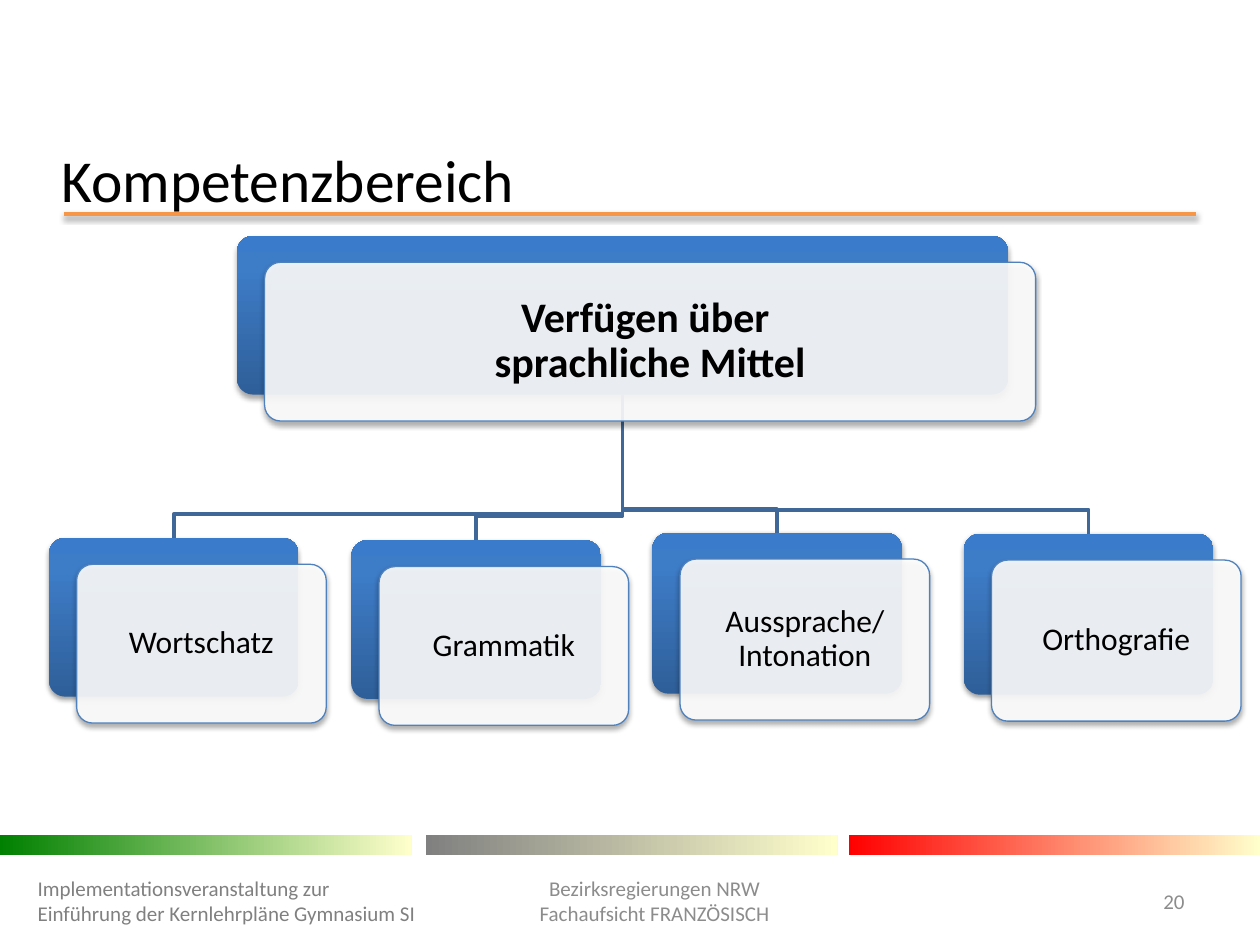
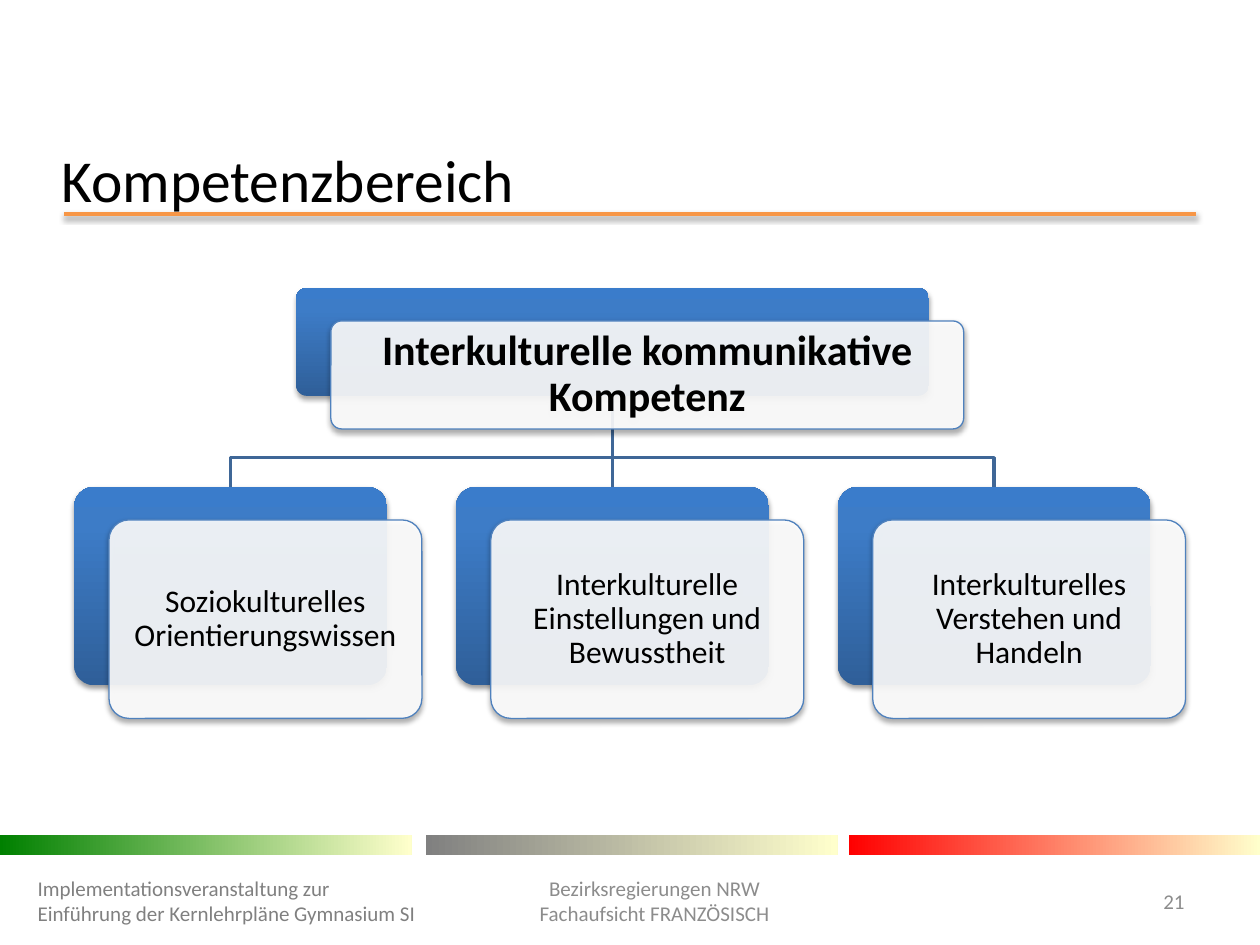
from lxml.etree import SubElement
from pptx import Presentation
from pptx.dml.color import RGBColor
from pptx.enum.shapes import MSO_CONNECTOR as Connector, MSO_SHAPE as Shape
from pptx.enum.text import MSO_ANCHOR as Anchor, PP_ALIGN as Align
from pptx.oxml.ns import qn
from pptx.util import Pt

# Content: each chart has one root and its children; boxes are left, top, width, height
TITLE = "Kompetenzbereich"
EVENT = "Implementationsveranstaltung zur\vEinführung der Kernlehrpläne Gymnasium SI"
AUTHORITY = "Bezirksregierungen NRW\nFachaufsicht FRANZÖSISCH"
CHARTS = [
    {
        "number": 20,
        "offset": (15.8, 15.1),
        "drop": 13.7,
        "root": ("Verfügen über \vsprachliche Mittel", (135.4, 134.8, 440.6, 90.7)),
        "children": [
            ("Wortschatz", (28, 307.4, 142.6, 90.7)),
            ("Grammatik", (200.8, 308.7, 142.6, 90.7)),
            ("Aussprache/ Intonation", (372.8, 304.4, 142.6, 92)),
            ("Orthografie", (550.8, 305, 142.6, 92)),
        ],
    },
    {
        "number": 21,
        "offset": (19.9, 18.9),
        "drop": 16.6,
        "root": ("Interkulturelle kommunikative Kompetenz", (169.2, 164.5, 361.6, 61.7)),
        "children": [
            (text, (42.4 + 218.2 * column, 278.2, 178.8, 113.4))
            for column, text in enumerate([
                "Soziokulturelles Orientierungswissen",
                "Interkulturelle Einstellungen und Bewusstheit",
                "Interkulturelles Verstehen und Handeln",
            ])
        ],
    },
]

# Shared style
FONT = "Calibri"
BLACK = RGBColor(0x00, 0x00, 0x00)
WHITE = RGBColor(0xFF, 0xFF, 0xFF)
ORANGE = RGBColor(0xF7, 0x96, 0x46)
GRAY = RGBColor(0x80, 0x80, 0x80)
LIGHT_GRAY = RGBColor(0x8C, 0x8C, 0x8C)
CREAM = RGBColor(0xFF, 0xFF, 0xCC)
GREEN = RGBColor(0x00, 0x80, 0x00)
RED = RGBColor(0xFF, 0x00, 0x00)
LINK_BLUE = RGBColor(0x3F, 0x67, 0x97)
EDGE_BLUE = RGBColor(0x4F, 0x81, 0xBD)
NODE_STOPS = [
    (0, RGBColor(0x2F, 0x5F, 0x99)),
    (80, RGBColor(0x3D, 0x7C, 0xC7)),
    (100, RGBColor(0x3A, 0x7C, 0xCB)),
]
BANDS = [(0, GREEN), (243.4, GRAY), (485, RED)]


def points(values):
    return [Pt(value) for value in values]


def set_gradient(shape, stops, angle):
    shape.fill.gradient()
    shape.fill.gradient_angle = angle
    stop_list = shape.fill._fill._gradFill.find(qn("a:gsLst"))
    stop_list.clear()
    for position, color in stops:
        stop = SubElement(stop_list, qn("a:gs"), pos=str(position * 1000))
        SubElement(stop, qn("a:srgbClr"), val=str(color))


def add_shadow(effects, distance, opacity):
    shadow = SubElement(effects, qn("a:outerShdw"), blurRad=str(Pt(3.1)),
                        dist=str(Pt(distance)), dir="5400000", rotWithShape="0")
    color = SubElement(shadow, qn("a:srgbClr"), val=str(BLACK))
    SubElement(color, qn("a:alpha"), val=str(opacity * 1000))


def write(frame, text, size, color, align, bold=False, spacing=None):
    frame.word_wrap = True
    frame.text = text
    for para in frame.paragraphs:
        para.alignment = align
        para.line_spacing = spacing
        font = para.font
        font.name, font.size, font.bold = FONT, Pt(size), bold
        font.color.rgb = color


def add_label(page, box, text, size, color, align=Align.LEFT, anchor=Anchor.MIDDLE):
    frame = page.shapes.add_textbox(*points(box)).text_frame
    frame.vertical_anchor = anchor
    write(frame, text, size, color, align)


def add_frame(page, number):
    # Title with its rule
    rule = page.shapes.add_connector(Connector.STRAIGHT, *points((36.6, 122.4, 683.4, 122.4)))
    rule.line.color.rgb = ORANGE
    rule.line.width = Pt(2)
    add_shadow(SubElement(rule._element.spPr, qn("a:effectLst")), 1.6, 38)
    add_label(page, (28.1, 78.5, 481.7, 48.2), TITLE, 34, BLACK, anchor=Anchor.TOP)

    # Colour bands
    for left, color in BANDS:
        band = page.shapes.add_shape(Shape.RECTANGLE, *points((left, 477.2, 235.2, 11.5)))
        band.shadow.inherit = False
        band.line.fill.background()
        set_gradient(band, [(0, color), (100, CREAM)], 0)

    # Footers
    add_label(page, (14.4, 500.4, 233.3, 28.8), EVENT, 12, GRAY)
    add_label(page, (269.3, 488.9, 209.5, 51.1), AUTHORITY, 12, LIGHT_GRAY, Align.CENTER)
    add_label(page, (637.9, 500.4, 46.1, 28.8), str(number), 12, LIGHT_GRAY, Align.RIGHT)


def add_panel(page, box, distance, opacity):
    panel = page.shapes.add_shape(Shape.ROUNDED_RECTANGLE, *points(box))
    panel.adjustments[0] = 0.1
    panel.shadow.inherit = False
    add_shadow(panel._element.spPr.find(qn("a:effectLst")), distance, opacity)
    return panel


def add_back(page, box, distance, opacity):
    back = add_panel(page, box, distance, opacity)
    back.line.fill.background()
    set_gradient(back, NODE_STOPS, 90)
    return back


def add_card(page, box, offset, text, size, bold, inset):
    left, top, width, height = box
    card = add_panel(page, (left + offset[0], top + offset[1], width, height), 1.8, 35)
    card.fill.solid()
    card.fill.fore_color.rgb = WHITE
    color = card._element.spPr.find(qn("a:solidFill")).find(qn("a:srgbClr"))
    SubElement(color, qn("a:alpha"), val="90000")
    card.line.color.rgb = EDGE_BLUE
    card.line.width = Pt(0.75)
    frame = card.text_frame
    frame.margin_left = frame.margin_right = Pt(inset)
    frame.margin_top = frame.margin_bottom = Pt(inset)
    frame.vertical_anchor = Anchor.MIDDLE
    write(frame, text, size, BLACK, Align.CENTER, bold, 0.9)


def add_link(page, root, child, drop):
    start_x, start_y = root.left + root.width // 2, root.top + root.height
    end_x, end_y = child.left + child.width // 2, child.top
    if abs(end_x - start_x) < Pt(1):
        link = page.shapes.add_connector(Connector.STRAIGHT, start_x, start_y, end_x, end_y)
        link.begin_connect(root, 2)
        link.end_connect(child, 0)
    else:
        bend_y = end_y - Pt(drop)
        builder = page.shapes.build_freeform(start_x, start_y)
        builder.add_line_segments([(start_x, bend_y), (end_x, bend_y), (end_x, end_y)],
                                  close=False)
        link = builder.convert_to_shape()
        link.fill.background()
    link.line.color.rgb = LINK_BLUE
    link.line.width = Pt(2)
    if link._element.spPr.find(qn("a:effectLst")) is None:
        SubElement(link._element.spPr, qn("a:effectLst"))


def add_chart_tree(page, chart):
    # Blue panels, then the links, then the white cards on top
    root_text, root_box = chart["root"]
    root = add_back(page, root_box, 1.8, 35)
    children = [add_back(page, box, 1.6, 38) for text, box in chart["children"]]
    for child in children:
        add_link(page, root, child, chart["drop"])
    add_card(page, root_box, chart["offset"], root_text, 24, True, 9)
    for text, box in chart["children"]:
        add_card(page, box, chart["offset"], text, 18, False, 8)


def main():
    deck = Presentation()
    deck.slide_width, deck.slide_height = Pt(720), Pt(540)
    for chart in CHARTS:
        page = deck.slides.add_slide(deck.slide_layouts[6])
        add_frame(page, chart["number"])
        add_chart_tree(page, chart)
    deck.save("out.pptx")


if __name__ == "__main__":
    main()
